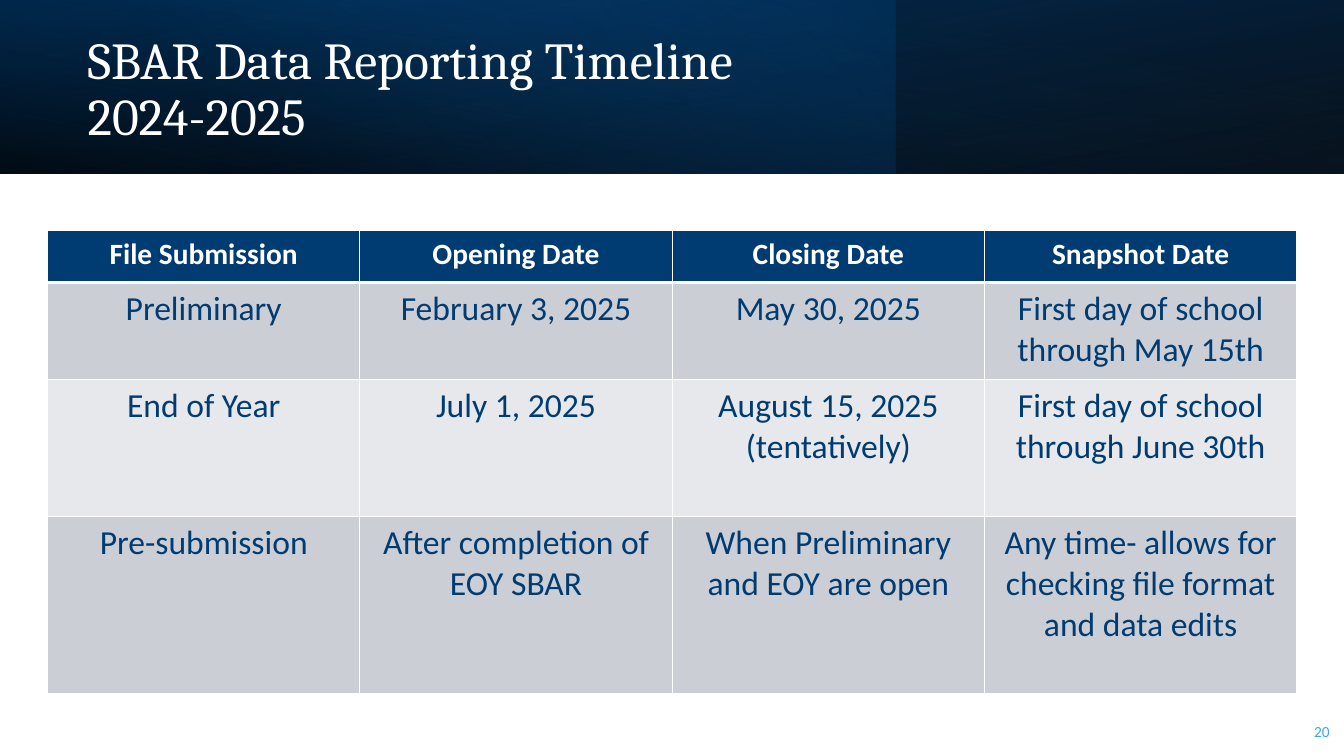
from dataclasses import dataclass

import pptx
import pptx.dml.color
import pptx.enum.shapes
import pptx.enum.text
import pptx.oxml
import pptx.oxml.ns
import pptx.presentation
import pptx.slide
import pptx.table
import pptx.text.text
import pptx.util

Pt = pptx.util.Pt
RGBColor = pptx.dml.color.RGBColor
Align = pptx.enum.text.PP_ALIGN
Anchor = pptx.enum.text.MSO_ANCHOR

BLACK = RGBColor(0x00, 0x00, 0x00)
WHITE = RGBColor(0xFF, 0xFF, 0xFF)
DEEP_NAVY = RGBColor(0x00, 0x2D, 0x55)
NAVY = RGBColor(0x00, 0x3C, 0x71)
BRIGHT_BLUE = RGBColor(0x11, 0x8F, 0xFF)
SKY_BLUE = RGBColor(0x39, 0xA2, 0xFF)
GREY = RGBColor(0xCC, 0xCE, 0xD5)
PALE_GREY = RGBColor(0xE7, 0xE8, 0xEB)

SLIDE_WIDTH, SLIDE_HEIGHT, BANNER_HEIGHT = 960, 540, 123.8
NAMESPACE = pptx.oxml.ns.nsdecls("a")


@dataclass(frozen=True)
class Stop:
    position: int
    color: RGBColor
    opacity: int


@dataclass(frozen=True)
class BannerLayer:
    width: float
    angle: int
    stops: tuple[Stop, ...]
    rotation: int = 0
    flipped: bool = True


@dataclass(frozen=True)
class TextStyle:
    font: str
    size: float
    color: RGBColor
    align: Align
    bold: bool = False


@dataclass(frozen=True)
class TableRow:
    height: float
    fill: RGBColor
    style: TextStyle
    texts: tuple[str, ...]


TITLE_STYLE = TextStyle("Cambria", 37, WHITE, Align.LEFT)
NUMBER_STYLE = TextStyle("Calibri", 11, SKY_BLUE, Align.RIGHT)
HEADER_STYLE = TextStyle("Calibri", 21, WHITE, Align.CENTER, bold=True)
BODY_STYLE = TextStyle("Calibri", 24, NAVY, Align.CENTER)

BANNER_LAYERS = (
    BannerLayer(SLIDE_WIDTH, 100, (Stop(0, BLACK, 96), Stop(100, DEEP_NAVY, 100)), rotation=180),
    BannerLayer(640, 140, (Stop(0, NAVY, 41), Stop(74, BRIGHT_BLUE, 0)), flipped=False),
    BannerLayer(SLIDE_WIDTH, 260, (Stop(0, BLACK, 63), Stop(78, NAVY, 15))),
)

TIMELINE = (
    TableRow(37.4, NAVY, HEADER_STYLE,
             ("File Submission", "Opening Date", "Closing Date", "Snapshot Date")),
    TableRow(69.1, GREY, BODY_STYLE,
             ("Preliminary", "February 3, 2025", "May 30, 2025",
              "First day of school through May 15th")),
    TableRow(97.9, PALE_GREY, BODY_STYLE,
             ("End of Year", "July 1, 2025", "August 15, 2025 (tentatively)",
              "First day of school through June 30th")),
    TableRow(126.7, GREY, BODY_STYLE,
             ("Pre-submission", "After completion of EOY SBAR",
              "When Preliminary and EOY are open",
              "Any time- allows for checking file format and data edits")),
)


def write_text(text_frame: pptx.text.text.TextFrame, text: str, style: TextStyle) -> None:
    text_frame.word_wrap = True
    paragraph = text_frame.paragraphs[0]
    paragraph.alignment = style.align
    run = paragraph.add_run()
    run.text = text
    run.font.name = style.font
    run.font.size = Pt(style.size)
    run.font.bold = style.bold
    run.font.color.rgb = style.color


def add_banner_layer(slide: pptx.slide.Slide, layer: BannerLayer) -> None:
    shape = slide.shapes.add_shape(pptx.enum.shapes.MSO_SHAPE.RECTANGLE,
                                   0, 0, Pt(layer.width), Pt(BANNER_HEIGHT))
    shape.shadow.inherit = False
    shape.line.fill.background()
    shape.rotation = layer.rotation
    properties = shape.element.spPr
    if layer.flipped:
        properties.find(pptx.oxml.ns.qn("a:xfrm")).set("flipH", "1")
    # Gradient with transparency takes the place of an empty fill
    shape.fill.background()
    stops = "".join(
        f'<a:gs pos="{stop.position * 1000}"><a:srgbClr val="{stop.color}">'
        f'<a:alpha val="{stop.opacity * 1000}"/></a:srgbClr></a:gs>'
        for stop in layer.stops)
    gradient = pptx.oxml.parse_xml(
        f'<a:gradFill {NAMESPACE} rotWithShape="1"><a:gsLst>{stops}</a:gsLst>'
        f'<a:lin ang="{layer.angle * 60000}" scaled="0"/></a:gradFill>')
    properties.replace(properties.find(pptx.oxml.ns.qn("a:noFill")), gradient)


def add_title(slide: pptx.slide.Slide, text: str) -> None:
    title = slide.shapes.title
    title.left, title.top, title.width, title.height = Pt(55.4), Pt(19.4), Pt(555.8), Pt(91.4)
    write_text(title.text_frame, text, TITLE_STYLE)
    title.text_frame.auto_size = pptx.enum.text.MSO_AUTO_SIZE.NONE
    title.text_frame.vertical_anchor = Anchor.MIDDLE
    title.text_frame.paragraphs[0].line_spacing = 0.9
    # Bring the title in front of the banner
    title.element.getparent().append(title.element)


def add_slide_number(slide: pptx.slide.Slide, number: str) -> None:
    box = slide.shapes.add_textbox(Pt(921.6), Pt(508.3), Pt(35.3), Pt(28.8))
    write_text(box.text_frame, number, NUMBER_STYLE)
    box.text_frame.vertical_anchor = Anchor.MIDDLE
    box.text_frame.paragraphs[0].space_after = Pt(6)


def set_borders(cell: pptx.table._Cell, top: float, bottom: float) -> None:
    properties = cell._tc.get_or_add_tcPr()
    for side, width in (("L", 1), ("R", 1), ("T", top), ("B", bottom)):
        properties.append(pptx.oxml.parse_xml(
            f'<a:ln{side} {NAMESPACE} w="{Pt(width)}"><a:solidFill>'
            f'<a:srgbClr val="{WHITE}"/></a:solidFill></a:ln{side}>'))


def add_timeline(slide: pptx.slide.Slide, rows: tuple[TableRow, ...]) -> None:
    column_count = len(rows[0].texts)
    width, height = 892.4, sum(row.height for row in rows)
    table = slide.shapes.add_table(len(rows), column_count, Pt(34), Pt(164.5),
                                   Pt(width), Pt(height)).table
    for column in table.columns:
        column.width = Pt(width / column_count)
    for row_index, row in enumerate(rows):
        table.rows[row_index].height = Pt(row.height)
        for column_index, text in enumerate(row.texts):
            cell = table.cell(row_index, column_index)
            cell.margin_left = cell.margin_right = Pt(8.6)
            cell.margin_top = cell.margin_bottom = Pt(4.3)
            # The rule under the header is heavier
            set_borders(cell, top=3 if row_index == 1 else 1, bottom=3 if row_index == 0 else 1)
            cell.fill.solid()
            cell.fill.fore_color.rgb = row.fill
            write_text(cell.text_frame, text, row.style)


def main() -> None:
    presentation = pptx.Presentation()
    presentation.slide_width, presentation.slide_height = Pt(SLIDE_WIDTH), Pt(SLIDE_HEIGHT)
    slide = presentation.slides.add_slide(presentation.slide_layouts[5])

    # Banner and title
    for layer in BANNER_LAYERS:
        add_banner_layer(slide, layer)
    add_title(slide, "SBAR Data Reporting Timeline 2024-2025")

    # Reporting dates and page number
    add_slide_number(slide, "20")
    add_timeline(slide, TIMELINE)
    presentation.save("out.pptx")


if __name__ == "__main__":
    main()
